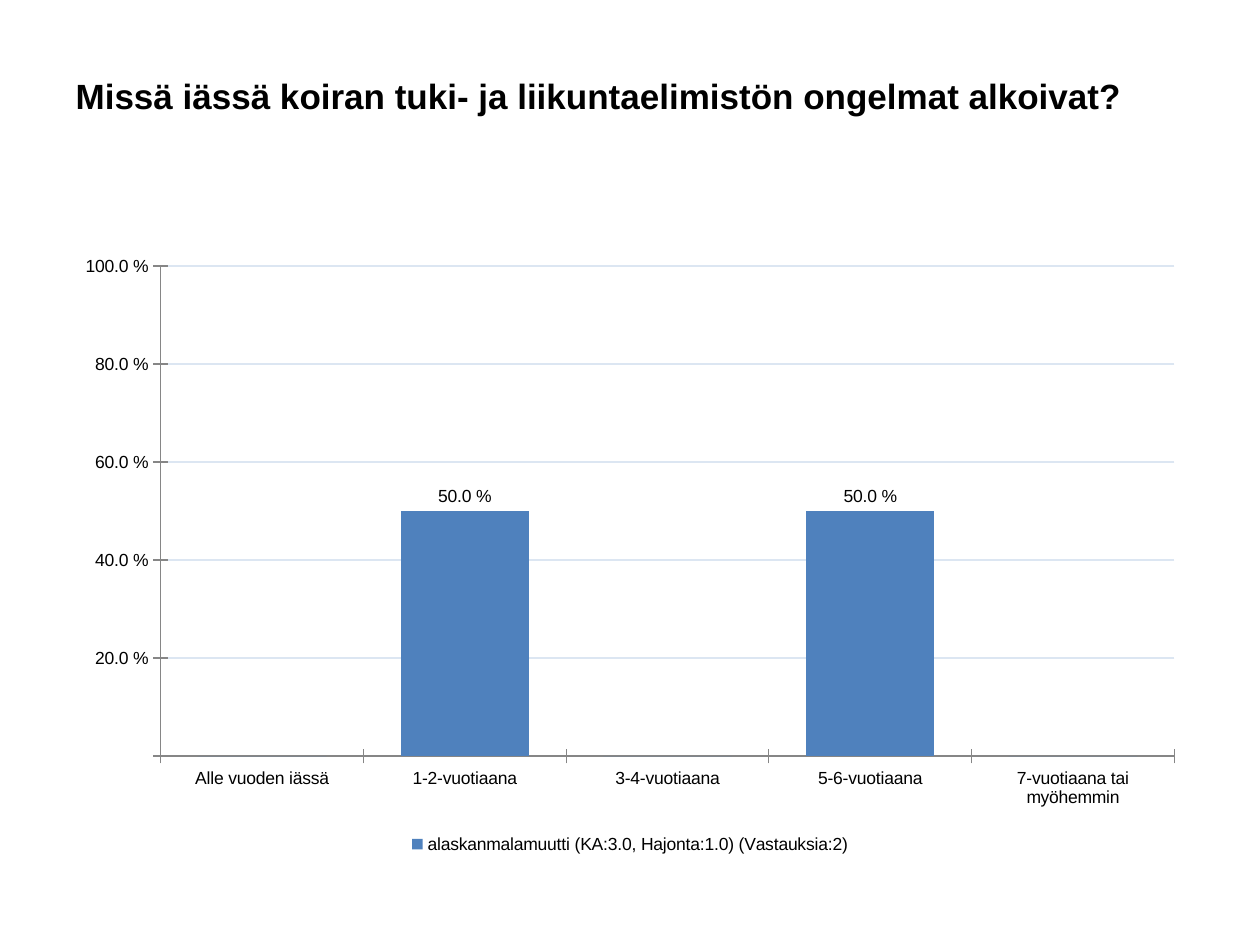
import dataclasses

import pptx
import pptx.chart.data
import pptx.dml.color
import pptx.enum.chart
import pptx.enum.text
import pptx.util


@dataclasses.dataclass(frozen=True)
class Theme:
    font: str = "Arial"
    text: str = "000000"
    bar: str = "4F81BD"
    grid: str = "DCE6F2"
    axis: str = "868686"
    title_size: int = 20
    chart_size: int = 10


theme = Theme()
PERCENT_FORMAT = r"0.0\ %;;;"  # zero stays blank


def px(length):
    return pptx.util.Emu(round(length * 914400 / 126))


def write_text(paragraph, text, size, bold=False, color=theme.text):
    paragraph.alignment = pptx.enum.text.PP_ALIGN.LEFT
    run = paragraph.add_run()
    run.text = text
    run.font.name = theme.font
    run.font.size = pptx.util.Pt(size)
    run.font.bold = bold
    run.font.color.rgb = pptx.dml.color.RGBColor.from_string(color)


presentation = pptx.Presentation()
presentation.slide_width = px(1260)
presentation.slide_height = px(945)
slide = presentation.slides.add_slide(presentation.slide_layouts[5])

# Title
title = slide.shapes.title
title.left, title.top, title.width, title.height = px(63), px(46), px(1134), px(100)
title.text_frame.vertical_anchor = pptx.enum.text.MSO_ANCHOR.MIDDLE
write_text(
    title.text_frame.paragraphs[0],
    "Missä iässä koiran tuki- ja liikuntaelimistön ongelmat alkoivat?",
    size=theme.title_size,
    bold=True,
)

# Chart data
chart_data = pptx.chart.data.CategoryChartData(number_format=PERCENT_FORMAT)
chart_data.categories = [
    "Alle vuoden iässä",
    "1-2-vuotiaana",
    "3-4-vuotiaana",
    "5-6-vuotiaana",
    "7-vuotiaana tai myöhemmin",
]
chart_data.add_series(
    "alaskanmalamuutti (KA:3.0, Hajonta:1.0) (Vastauksia:2)", [0, 0.5, 0, 0.5, 0]
)

# Column chart with legend
chart = slide.shapes.add_chart(
    pptx.enum.chart.XL_CHART_TYPE.COLUMN_CLUSTERED,
    px(63), px(244), px(1134), px(615), chart_data,
).chart
chart.has_title = False
chart.has_legend = True
chart.legend.position = pptx.enum.chart.XL_LEGEND_POSITION.BOTTOM
chart.legend.include_in_layout = False

# Columns and their labels
plot = chart.plots[0]
plot.gap_width = 58
plot.vary_by_categories = False
fill = plot.series[0].format.fill
fill.solid()
fill.fore_color.rgb = pptx.dml.color.RGBColor.from_string(theme.bar)
plot.has_data_labels = True
labels = plot.data_labels
labels.show_value = True
labels.number_format = PERCENT_FORMAT
labels.number_format_is_linked = False
labels.position = pptx.enum.chart.XL_LABEL_POSITION.OUTSIDE_END

# Axes and gridlines
value_axis = chart.value_axis
value_axis.minimum_scale = 0
value_axis.maximum_scale = 1
value_axis.major_unit = 0.2
value_axis.has_major_gridlines = True
for axis in (chart.category_axis, value_axis):
    axis.major_tick_mark = pptx.enum.chart.XL_TICK_MARK.CROSS
    axis.minor_tick_mark = pptx.enum.chart.XL_TICK_MARK.NONE
    axis.tick_labels.number_format = PERCENT_FORMAT
    axis.tick_labels.number_format_is_linked = False
for line_format, color in (
    (chart.category_axis.format, theme.axis),
    (value_axis.format, theme.axis),
    (value_axis.major_gridlines.format, theme.grid),
):
    line_format.line.width = pptx.util.Pt(0.75)
    line_format.line.color.rgb = pptx.dml.color.RGBColor.from_string(color)

# Chart type
for part in (chart, chart.legend, labels, chart.category_axis.tick_labels, value_axis.tick_labels):
    part.font.name = theme.font
    part.font.size = pptx.util.Pt(theme.chart_size)
    part.font.color.rgb = pptx.dml.color.RGBColor.from_string(theme.text)

presentation.save("out.pptx")
